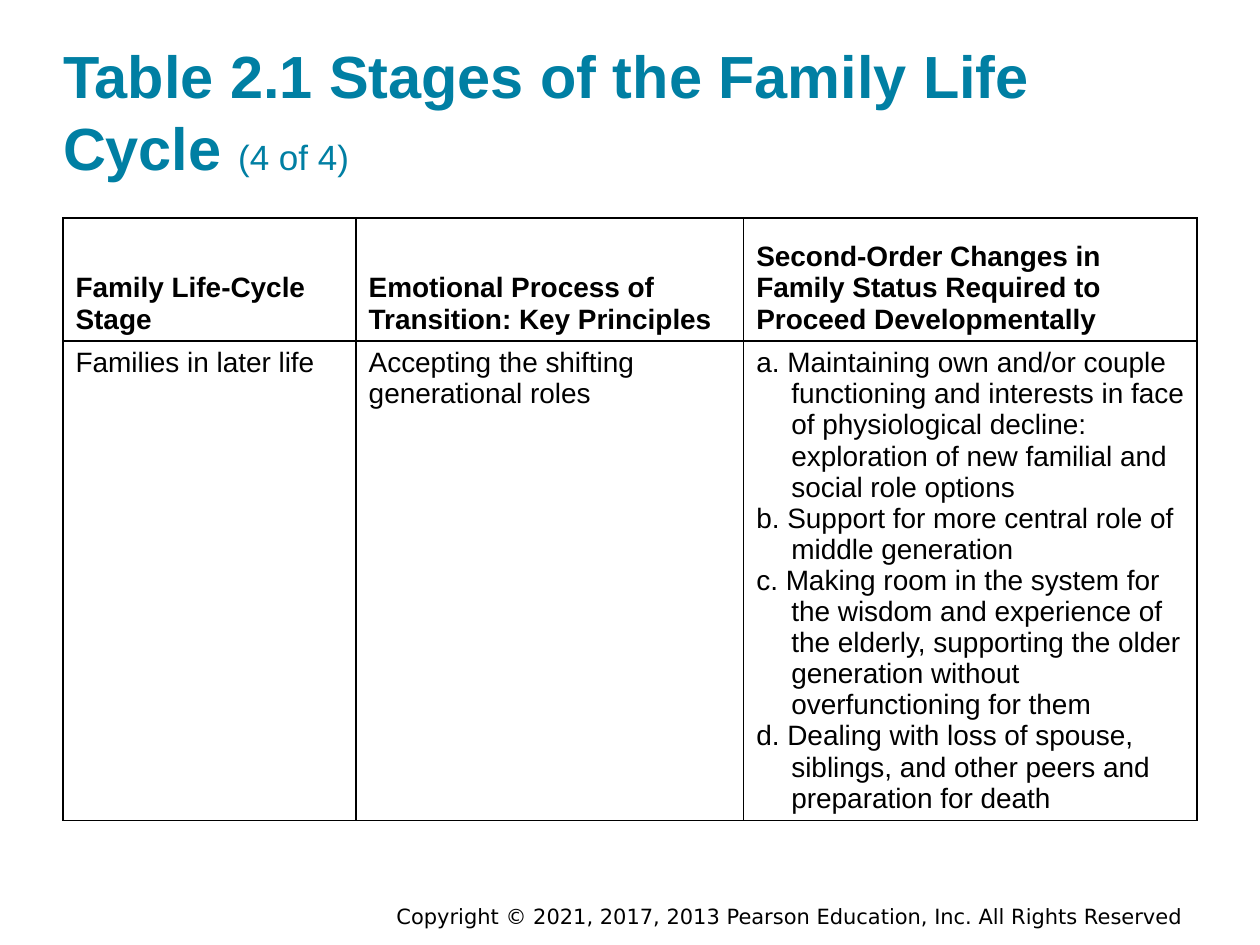
import pptx
import pptx.util
import pptx.dml.color
import pptx.enum.text
import pptx.oxml
import pptx.oxml.ns

Pt = pptx.util.Pt
ALIGN = pptx.enum.text.PP_ALIGN
ANCHOR = pptx.enum.text.MSO_ANCHOR

COLORS = {"title": "007FA3", "text": "000000", "border": "000000"}
HANGING = 20

HEADINGS = [
    "Family Life-Cycle Stage",
    "Emotional Process of Transition: Key Principles",
    "Second-Order Changes in Family Status Required to Proceed Developmentally",
]
STAGE = "Families in later life"
PRINCIPLE = "Accepting the shifting generational roles"
CHANGES = [
    "a. Maintaining own and/or couple functioning and interests in face of "
    "physiological decline: exploration of new familial and social role options",
    "b. Support for more central role of middle generation",
    "c. Making room in the system for the wisdom and experience of the elderly, "
    "supporting the older generation without overfunctioning for them",
    "d. Dealing with loss of spouse, siblings, and other peers and preparation for death",
]
COPYRIGHT = "Copyright © 2021, 2017, 2013 Pearson Education, Inc. All Rights Reserved"


def write(paragraph, text, size=16, font="Arial", color="text", bold=False,
          align=ALIGN.LEFT, hanging=0):
    """Add one formatted run to a paragraph."""
    paragraph.alignment = align
    if hanging:
        properties = paragraph._p.get_or_add_pPr()
        properties.set("marL", str(Pt(hanging)))
        properties.set("indent", str(-Pt(hanging)))
    run = paragraph.add_run()
    run.text = text
    run.font.size = Pt(size)
    run.font.name = font
    run.font.bold = bold
    run.font.color.rgb = pptx.dml.color.RGBColor.from_string(COLORS[color])


def add_title(slide, left, top, width, height):
    title = slide.shapes.title
    title.left, title.top, title.width, title.height = map(Pt, (left, top, width, height))
    frame = title.text_frame
    frame.margin_left = frame.margin_right = frame.margin_top = frame.margin_bottom = 0
    frame.vertical_anchor = ANCHOR.BOTTOM
    frame.auto_size = pptx.enum.text.MSO_AUTO_SIZE.NONE
    frame.word_wrap = True
    heading = frame.paragraphs[0]
    write(heading, "Table 2.1 Stages of the Family Life Cycle ", size=34, color="title", bold=True)
    write(heading, "(4 of 4)", size=20, color="title")


def add_borders(cell):
    properties = cell._tc.get_or_add_tcPr()
    for position, side in enumerate(("lnL", "lnR", "lnT", "lnB")):
        properties.insert(position, pptx.oxml.parse_xml(
            f'<a:{side} {pptx.oxml.ns.nsdecls("a")} w="{Pt(1)}"><a:solidFill>'
            f'<a:srgbClr val="{COLORS["border"]}"/></a:solidFill></a:{side}>'))


def add_stages_table(slide, left, top, width, height):
    column_widths = [167.5, 221.5, width - 167.5 - 221.5]
    header_height = 70.5
    rows = [[[heading] for heading in HEADINGS], [[STAGE], [PRINCIPLE], CHANGES]]
    stages = slide.shapes.add_table(
        len(rows), len(HEADINGS), Pt(left), Pt(top), Pt(width), Pt(height)).table
    for column, column_width in zip(stages.columns, column_widths):
        column.width = Pt(column_width)
    for row, row_height in zip(stages.rows, (header_height, height - header_height)):
        row.height = Pt(row_height)

    for row_index, row in enumerate(rows):
        is_header = row_index == 0
        for column_index, entries in enumerate(row):
            cell = stages.cell(row_index, column_index)
            cell.fill.background()
            cell.vertical_anchor = ANCHOR.BOTTOM if is_header else ANCHOR.TOP
            add_borders(cell)
            frame = cell.text_frame
            for index, entry in enumerate(entries):
                paragraph = frame.add_paragraph() if index else frame.paragraphs[0]
                write(paragraph, entry, bold=is_header,
                      hanging=HANGING if len(entries) > 1 else 0)


def add_copyright(slide, left, top, width, height):
    frame = slide.shapes.add_textbox(Pt(left), Pt(top), Pt(width), Pt(height)).text_frame
    frame.word_wrap = True
    frame.vertical_anchor = ANCHOR.MIDDLE
    write(frame.paragraphs[0], COPYRIGHT, size=12, font="DejaVu Sans",
          align=ALIGN.RIGHT, hanging=HANGING)


def main():
    deck = pptx.Presentation()
    deck.slide_width, deck.slide_height = Pt(720), Pt(540)
    slide = deck.slides.add_slide(deck.slide_layouts.get_by_name("Title Only"))
    add_title(slide, 36, 17.5, 648, 86.5)
    add_stages_table(slide, 36, 124.5, 648, 344)
    add_copyright(slide, 211, 507, 472, 33)
    deck.save("out.pptx")


if __name__ == "__main__":
    main()
